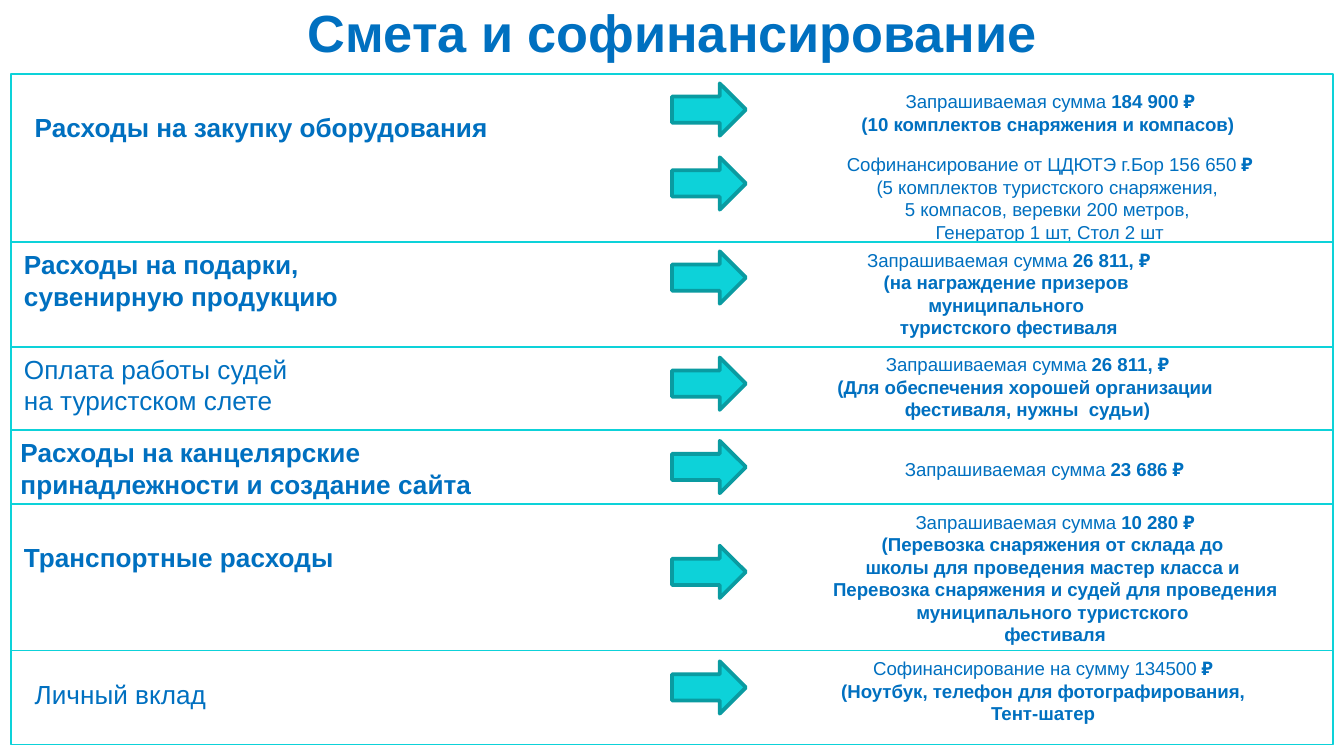
from pptx import Presentation
from pptx.dml.color import RGBColor
from pptx.enum.shapes import MSO_SHAPE
from pptx.enum.text import MSO_ANCHOR, PP_ALIGN
from pptx.util import Inches, Pt

COLORS = {"text": "0070C0", "accent": "0DD2D9", "arrow_line": "0A9BA1"}
FONT = "Arial"

# Grid: table edges, row boundaries and the arrow column
LEFT, WIDTH = 0.08, 9.84
ROW_EDGES = [0.55, 1.8, 2.58, 3.2, 3.75, 4.84, 5.54]
ARROW_LEFT, ARROW_WIDTH, ARROW_HEIGHT = 5, 0.55, 0.39

# Left labels by row: left, offset from the row top, width, height, bold, lines
LABELS = [
    (0.16, 0.23, 4.8, 0.57, True, ["Расходы на закупку оборудования"]),
    (0.08, 0, 4.69, 0.88, True, ["Расходы на подарки,", "сувенирную продукцию"]),
    (0.08, 0, 3.09, 0.57, False, ["Оплата работы судей", "на туристском слете"]),
    (0, 0, 5.31, 0.88, True,
     [" Расходы на канцелярские", " принадлежности и создание сайта"]),
    (0.08, 0.23, 3.33, 0.64, True, ["Транспортные расходы"]),
    (0.16, 0.16, 2.05, 0.34, False, ["Личный вклад"]),
]

# Sums: row, arrow offset, text offset, left, width, height,
# plain start, bold amount, detail lines, bold details
SUMS = [
    (0, 0.07, 0.07, 5.63, 4.37, 0.74, "Запрашиваемая сумма ", "184 900 ₽",
     ["(10 комплектов снаряжения и компасов) "], True),
    (0, 0.62, 0.54, 5.62, 4.38, 0.77, "Софинансирование от ЦДЮТЭ г.Бор 156 650", " ₽",
     ["(5 комплектов туристского снаряжения, ", "5 компасов, веревки 200 метров, ",
      "Генератор 1 шт, Стол 2 шт"], False),
    (1, 0.07, 0, 6.02, 2.97, 0.77, "Запрашиваемая сумма ", "26 811, ₽",
     ["(на награждение призеров ", "муниципального ", "туристского фестиваля"], True),
    (2, 0.08, 0, 5.63, 4.03, 0.77, "Запрашиваемая сумма ", "26 811, ₽",
     ["(Для обеспечения хорошей организации ", "фестиваля, нужны  судьи)"], True),
    (3, 0.08, 0.16, 6.25, 3.08, 0.27, "Запрашиваемая сумма ", "23 686 ₽ ", [], True),
    (4, 0.31, 0, 5.86, 3.98, 1.11, "Запрашиваемая сумма ", "10 280 ₽",
     ["(Перевозка снаряжения от склада до ", "школы для проведения мастер класса и ",
      "Перевозка снаряжения и судей для проведения муниципального туристского ",
      "фестиваля"], True),
    (5, 0.08, 0, 5.7, 4.16, 0.61, "Софинансирование на сумму 134500 ", "₽ ",
     ["(Ноутбук, телефон для фотографирования, ", "Тент-шатер "], True),
]


def format_font(font, size, bold):
    font.name = FONT
    font.size = Pt(size)
    font.bold = bold
    font.color.rgb = RGBColor.from_string(COLORS["text"])


def add_lines(left, top, width, height, lines, size, alignment):
    """Add a text box; each line is a list of (text, bold) runs."""
    box = slide.shapes.add_textbox(Inches(left), Inches(top), Inches(width), Inches(height))
    text_frame = box.text_frame
    text_frame.word_wrap = True
    for index, runs in enumerate(lines):
        paragraph = text_frame.add_paragraph() if index else text_frame.paragraphs[0]
        paragraph.alignment = alignment
        for text, bold in runs:
            run = paragraph.add_run()
            run.text = text
            format_font(run.font, size, bold)


# A 16:9 slide
presentation = Presentation()
presentation.slide_width = Inches(10)
presentation.slide_height = Inches(10 * 9 / 16)
slide = presentation.slides.add_slide(presentation.slide_layouts[5])

# Title
title = slide.shapes.title
title.left, title.top = Inches(0), Inches(-0.08)
title.width, title.height = presentation.slide_width, Inches(0.63)
title.text_frame.text = "Смета и софинансирование"
title.text_frame.vertical_anchor = MSO_ANCHOR.MIDDLE
title.text_frame.paragraphs[0].alignment = PP_ALIGN.CENTER
format_font(title.text_frame.paragraphs[0].runs[0].font, 28, True)

# Expense labels
for row_top, (left, offset, width, height, bold, lines) in zip(ROW_EDGES, LABELS):
    add_lines(left, row_top + offset, width, height,
              [[(line, bold)] for line in lines], 14, PP_ALIGN.LEFT)

# Arrows and sums
for (row, arrow_offset, text_offset, left, width, height,
     start, amount, details, bold) in SUMS:
    arrow = slide.shapes.add_shape(
        MSO_SHAPE.RIGHT_ARROW, Inches(ARROW_LEFT), Inches(ROW_EDGES[row] + arrow_offset),
        Inches(ARROW_WIDTH), Inches(ARROW_HEIGHT))
    arrow.shadow.inherit = False
    arrow.fill.solid()
    arrow.fill.fore_color.rgb = RGBColor.from_string(COLORS["accent"])
    arrow.line.color.rgb = RGBColor.from_string(COLORS["arrow_line"])
    arrow.line.width = Pt(2)
    lines = [[(start, False), (amount, True)]] + [[(detail, bold)] for detail in details]
    add_lines(left, ROW_EDGES[row] + text_offset, width, height,
              lines, 10, PP_ALIGN.CENTER)

# Row frames
for top, bottom in zip(ROW_EDGES, ROW_EDGES[1:]):
    frame = slide.shapes.add_shape(
        MSO_SHAPE.RECTANGLE, Inches(LEFT), Inches(top), Inches(WIDTH), Inches(bottom - top))
    frame.shadow.inherit = False
    frame.fill.background()
    frame.line.color.rgb = RGBColor.from_string(COLORS["accent"])
    frame.line.width = Pt(1)

presentation.save("out.pptx")
